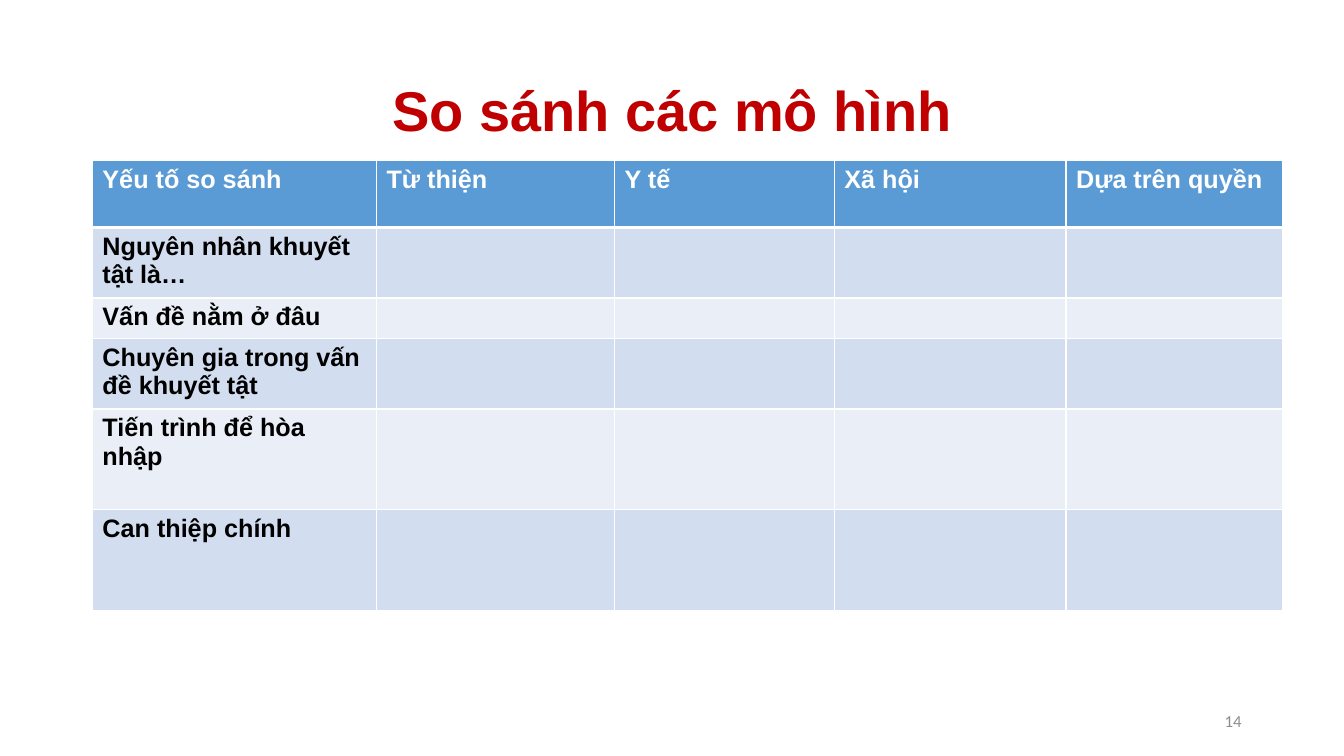
import pptx
import pptx.util
import pptx.dml.color
import pptx.enum.text
import lxml.etree

Pt = pptx.util.Pt
ALIGN = pptx.enum.text.PP_ALIGN
MIDDLE = pptx.enum.text.MSO_ANCHOR.MIDDLE
HUES = {
    "title": "C00000", "head": "5B9BD5", "odd": "D2DEEF", "even": "EAEFF7",
    "white": "FFFFFF", "black": "000000", "grey": "8C8C8C",
}
FORMS = {
    "title": {"name": "Arial", "size": Pt(40), "bold": True},
    "cell": {"name": "Arial", "size": Pt(18), "bold": True},
    "page": {"name": "Calibri", "size": Pt(12), "bold": False},
}
HEADS = ["Yếu tố so sánh", "Từ thiện", "Y tế", "Xã hội", "Dựa trên quyền"]
TOPICS = [
    "Nguyên nhân khuyết tật là…",
    "Vấn đề nằm ở đâu",
    "Chuyên gia trong vấn đề khuyết tật",
    "Tiến trình để hòa nhập",
    "Can thiệp chính",
]
WIDTHS = [203, 170, 157, 165.5, 155]
HEIGHTS = [48, 48, 28, 48, 72, 72]


def color(hue):
    return pptx.dml.color.RGBColor.from_string(HUES[hue])


def style(font, form, hue):
    for key, value in FORMS[form].items():
        setattr(font, key, value)
    font.color.rgb = color(hue)


def label(slide, box, text, form, hue, align, spacing=1.0):
    frame = slide.shapes.add_textbox(*map(Pt, box)).text_frame
    frame.word_wrap = True
    frame.vertical_anchor = MIDDLE
    para = frame.paragraphs[0]
    para.alignment = align
    para.line_spacing = spacing
    run = para.add_run()
    run.text = text
    style(run.font, form, hue)


def border(cell, widths):
    props = cell._tc.get_or_add_tcPr()
    for side, width in widths.items():
        line = lxml.etree.SubElement(
            props, pptx.oxml.ns.qn("a:ln" + side), w=str(Pt(width)))
        fill = lxml.etree.SubElement(line, pptx.oxml.ns.qn("a:solidFill"))
        lxml.etree.SubElement(
            fill, pptx.oxml.ns.qn("a:srgbClr"), val=HUES["white"])


def grid(slide, left, top):
    rows = [HEADS] + [[topic] + [""] * (len(HEADS) - 1) for topic in TOPICS]
    table = slide.shapes.add_table(
        len(rows), len(HEADS), Pt(left), Pt(top),
        Pt(sum(WIDTHS)), Pt(sum(HEIGHTS))).table
    for column, width in zip(table.columns, WIDTHS):
        column.width = Pt(width)
    for r, (texts, height) in enumerate(zip(rows, HEIGHTS)):
        table.rows[r].height = Pt(height)
        shade = "head" if r == 0 else "odd" if r % 2 else "even"
        for c, text in enumerate(texts):
            cell = table.cell(r, c)
            border(cell, {"L": 1, "R": 1, "T": 3 if r == 1 else 1,
                          "B": 3 if r == 0 else 1})
            cell.fill.solid()
            cell.fill.fore_color.rgb = color(shade)
            para = cell.text_frame.paragraphs[0]
            if text:
                run = para.add_run()
                run.text = text
                style(run.font, "cell", "black" if r else "white")
            else:
                para.font.size = Pt(18)


def main():
    deck = pptx.Presentation()
    deck.slide_width, deck.slide_height = Pt(960), Pt(540)
    slide = deck.slides.add_slide(deck.slide_layouts[6])
    label(slide, (66, 28.75, 828, 104.4), "So sánh các mô hình",
          "title", "title", ALIGN.CENTER, 0.9)
    grid(slide, 66, 114.5)
    label(slide, (678, 500.5, 216, 28.75), "14", "page", "grey", ALIGN.RIGHT)
    deck.save("out.pptx")


if __name__ == "__main__":
    main()
